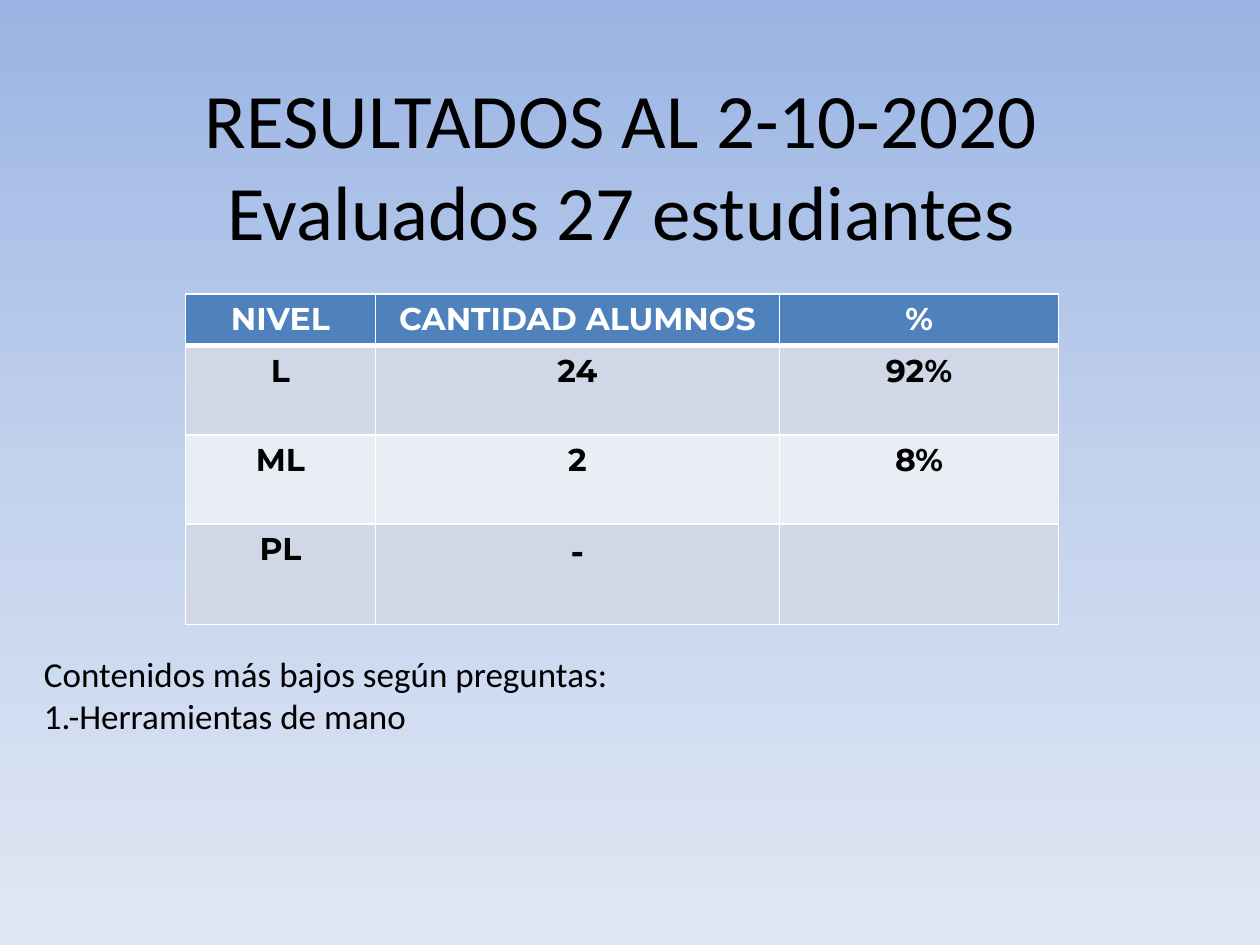
from copy import deepcopy

from lxml.etree import SubElement
from pptx import Presentation
from pptx.dml.color import RGBColor as RGB
from pptx.enum.text import MSO_ANCHOR as Anchor, PP_ALIGN as Align
from pptx.oxml.ns import qn
from pptx.util import Pt

TITLE = "RESULTADOS AL 2-10-2020\vEvaluados 27 estudiantes"
ROWS = [
    ("NIVEL", "CANTIDAD ALUMNOS", "%"),
    ("L", "24", "92%"),
    ("ML", "2", "8%"),
    ("PL", "-", ""),
]
NOTES = "Contenidos más bajos según preguntas:\n1.-Herramientas de mano"

COLORS = {
    "text": "000000", "line": "FFFFFF", "head": "4F81BD",
    "odd": "D0D8E8", "even": "E9EDF4",
}
SKY = [(0, "9AB5E4"), (0.5, "C2D1ED"), (1, "E1E8F5")]
WIDTHS = [108.5, 231, 159.5]
HEIGHTS = [29.5, 51, 51, 57.5]


def style(frame, size, font, color, bold=False, align=Align.LEFT):
    for para in frame.paragraphs:
        para.alignment = align
        for run in para.runs:
            run.font.size = Pt(size)
            run.font.name = font
            run.font.bold = bold
            run.font.color.rgb = RGB.from_string(COLORS[color])


def add_text(slide, box, text, size, align, anchor):
    frame = slide.shapes.add_textbox(*map(Pt, box)).text_frame
    frame.word_wrap = True
    frame.vertical_anchor = anchor
    frame.text = text
    style(frame, size, "Calibri", "text", align=align)


def add_edges(cell, widths):
    """Draw the cell borders; widths maps each side to points."""
    props = cell._tc.get_or_add_tcPr()
    for spot, (side, width) in enumerate(widths.items()):
        line = SubElement(props, qn(f"a:ln{side}"), w=str(Pt(width)))
        fill = SubElement(line, qn("a:solidFill"))
        SubElement(fill, qn("a:srgbClr"), val=COLORS["line"])
        props.insert(spot, line)


def paint_sky(slide):
    fill = slide.background.fill
    fill.gradient()
    fill.gradient_angle = 270
    stops = slide.element.find(".//" + qn("a:gsLst"))
    stops.insert(1, deepcopy(stops[0]))
    for stop, (place, color) in zip(fill.gradient_stops, SKY):
        stop.position = place
        stop.color.rgb = RGB.from_string(color)


def add_grid(slide, left, top):
    table = slide.shapes.add_table(
        len(ROWS), len(WIDTHS), Pt(left), Pt(top),
        Pt(sum(WIDTHS)), Pt(sum(HEIGHTS))).table
    for col, width in zip(table.columns, WIDTHS):
        col.width = Pt(width)
    for r, (row, height) in enumerate(zip(ROWS, HEIGHTS)):
        table.rows[r].height = Pt(height)
        shade = "head" if r == 0 else "odd" if r % 2 else "even"
        edges = {"L": 1, "R": 1, "T": 3 if r == 1 else 1,
                 "B": 3 if r == 0 else 1}
        for c, text in enumerate(row):
            cell = table.cell(r, c)
            cell.text_frame.text = text
            style(cell.text_frame, 20 if text == "-" else 18, "Montserrat",
                  "text" if r else "line", True, Align.CENTER)
            cell.fill.solid()
            cell.fill.fore_color.rgb = RGB.from_string(COLORS[shade])
            add_edges(cell, edges)


def main():
    deck = Presentation()
    deck.slide_width, deck.slide_height = Pt(720), Pt(540)
    slide = deck.slides.add_slide(deck.slide_layouts[6])
    paint_sky(slide)
    add_text(slide, (31, 31.5, 648, 124.5), TITLE, 44,
             Align.CENTER, Anchor.MIDDLE)
    add_grid(slide, 106, 168)
    add_text(slide, (18, 369.5, 674.5, 55.5), NOTES, 20,
             Align.LEFT, Anchor.TOP)
    deck.save("out.pptx")


if __name__ == "__main__":
    main()
